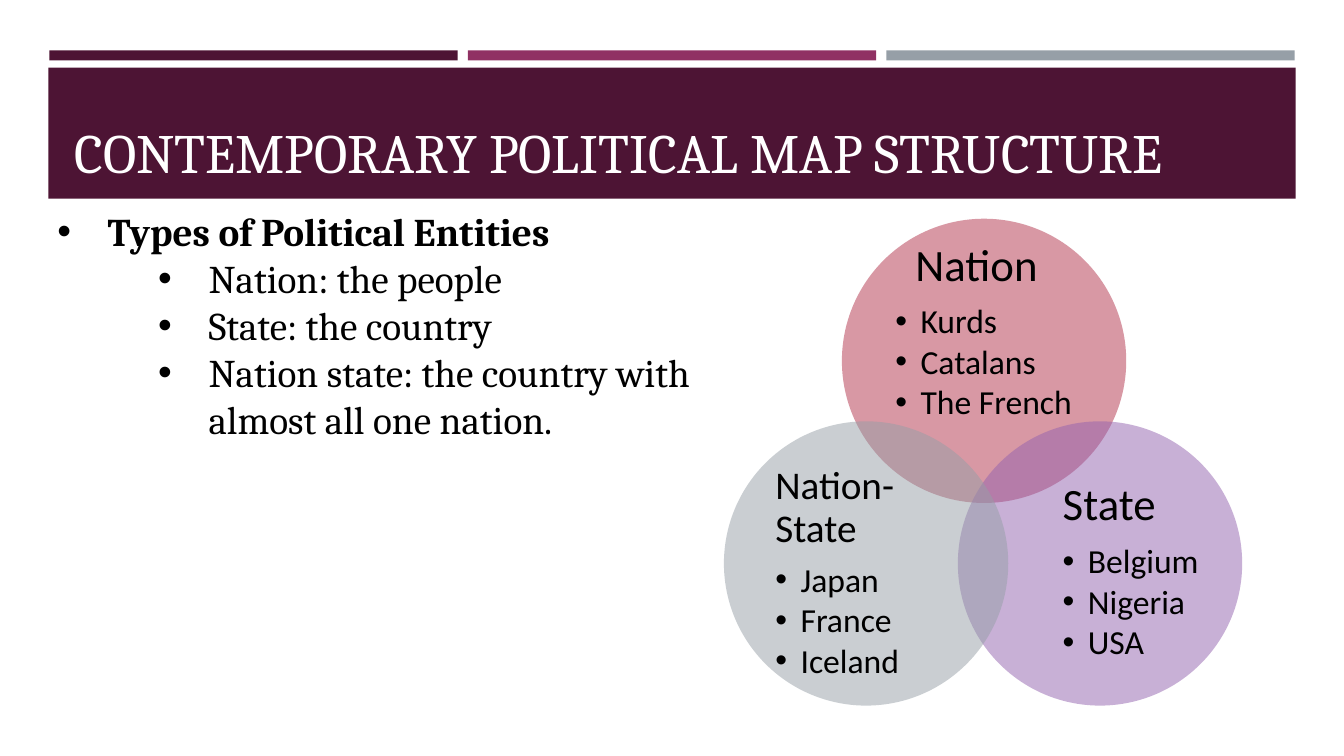
"""Build a slide on the structure of the contemporary political map."""
from pptx import Presentation
from pptx.dml.color import RGBColor
from pptx.enum.shapes import MSO_SHAPE
from pptx.enum.text import MSO_ANCHOR, MSO_AUTO_SIZE, PP_ALIGN
from pptx.oxml.ns import qn
from pptx.util import Inches, Pt
from lxml.etree import SubElement

PLUM = RGBColor(0x4D, 0x14, 0x34)
MAGENTA = RGBColor(0x90, 0x31, 0x63)
GREY = RGBColor(0x96, 0x9F, 0xA7)
RED = RGBColor(0xB2, 0x32, 0x4B)
PURPLE = RGBColor(0x93, 0x62, 0xAF)
BLACK = RGBColor(0, 0, 0)
WHITE = RGBColor(0xFF, 0xFF, 0xFF)

BAR_LEFT, BAR_WIDTH, BAR_STEP = 0.49, 4.05, 4.15
CIRCLE_SIZE = 2.82
ENTITIES = [
    "Nation: the people",
    "State: the country",
    "Nation state: the country with almost all one nation.",
]
CIRCLES = [
    (RED, (8.35, 2.17), (8.88, 2.66, 1.91, 1.27), "Nation", 32, 0.2,
     ["Kurds", "Catalans", "The French"]),
    (PURPLE, (9.5, 4.18), (10.54, 4.9, 1.52, 1.55), "State", 32, 0,
     ["Belgium", "Nigeria", "USA"]),
    (GREY, (7.18, 4.18), (7.69, 4.91, 1.45, 1.55), "Nation- State", 28, 0,
     ["Japan", "France", "Iceland"]),
]


class SlideBuilder:
    """Hold the fonts and the current page, and draw its elements."""

    heading_font = "Cambria"
    diagram_font = "Calibri"

    def __init__(self, page):
        self.page = page

    def shape(self, kind, left, top, width, height, color, opacity=None):
        """Draw a filled shape without an outline."""
        shape = self.page.shapes.add_shape(
            kind, Inches(left), Inches(top), Inches(width), Inches(height))
        shape.shadow.inherit = False
        shape.line.fill.background()
        shape.fill.solid()
        shape.fill.fore_color.rgb = color
        if opacity is not None:
            tint = shape.fill._xPr.find(qn("a:solidFill"))[0]
            SubElement(tint, qn("a:alpha"), val=str(opacity * 1000))

    def style(self, para, font, size, color=BLACK, bold=False):
        """Format every run of a paragraph."""
        for span in para.runs:
            span.font.name = font
            span.font.size = Pt(size)
            span.font.color.rgb = color
            span.font.bold = bold

    def indent(self, para, margin, hanging=0):
        """Indent a paragraph, with a bullet when the indent hangs."""
        props = para._p.get_or_add_pPr()
        props.set("marL", str(Inches(margin)))
        props.set("indent", str(-Inches(hanging)))
        if hanging:
            SubElement(props, qn("a:buFont"), typeface="Arial")
            SubElement(props, qn("a:buChar"), char="•")

    def title(self, text, left, top, width, height):
        """Place the title in front of its band."""
        box = self.page.shapes.title
        box.left, box.top = Inches(left), Inches(top)
        box.width, box.height = Inches(width), Inches(height)
        frame = box.text_frame
        frame.text = text
        frame.auto_size = MSO_AUTO_SIZE.NONE
        frame.vertical_anchor = MSO_ANCHOR.BOTTOM
        para = frame.paragraphs[0]
        para.alignment = PP_ALIGN.LEFT
        self.style(para, self.heading_font, 39.6, WHITE)
        self.page.shapes._spTree.append(box._element)

    def text_box(self, left, top, width, height, lines):
        """Add a wrapped text box with one paragraph per line."""
        box = self.page.shapes.add_textbox(
            Inches(left), Inches(top), Inches(width), Inches(height))
        frame = box.text_frame
        frame.word_wrap = True
        frame.text = "\n".join(lines)
        return frame

    def outline(self, area, heading, items):
        """Write a bold bullet with second-level bullets below it."""
        frame = self.text_box(*area, [heading, *items])
        for number, para in enumerate(frame.paragraphs):
            para.level = 2 if number else 0
            self.style(para, self.heading_font, 28, bold=number == 0)
            self.indent(para, 1.5 if number else 0.5, 0.5)

    def circle_text(self, area, heading, size, margin, items):
        """Write a heading and its bulleted examples in a circle."""
        frame = self.text_box(*area, [heading, *items])
        frame.vertical_anchor = MSO_ANCHOR.MIDDLE
        frame.margin_left = frame.margin_right = 0
        frame.margin_top = frame.margin_bottom = 0
        for number, para in enumerate(frame.paragraphs):
            para.line_spacing = 0.9
            para.level = 1 if number else 0
            para.space_after = Pt(3) if number else Pt(round(size * 0.31))
            self.style(para, self.diagram_font, 24 if number else size)
            self.indent(para, *((0.25, 0.25) if number else (margin,)))


def main():
    deck = Presentation()
    deck.slide_width, deck.slide_height = Inches(13.33), Inches(7.5)
    builder = SlideBuilder(deck.slides.add_slide(deck.slide_layouts[5]))

    for number, color in enumerate((PLUM, MAGENTA, GREY)):
        builder.shape(MSO_SHAPE.RECTANGLE, BAR_LEFT + number * BAR_STEP, 0.5,
                      BAR_WIDTH, 0.1, color)
    builder.shape(MSO_SHAPE.RECTANGLE, 0.48, 0.67, 12.37, 1.3, PLUM)
    builder.title("CONTEMPORARY POLITICAL MAP STRUCTURE", 0.64, 0.77, 12.06, 1.11)
    builder.outline((0.47, 2.01, 6.72, 2.46), "Types of Political Entities", ENTITIES)

    for color, corner, area, heading, size, margin, items in CIRCLES:
        builder.shape(MSO_SHAPE.OVAL, *corner, CIRCLE_SIZE, CIRCLE_SIZE, color, 50)
        builder.circle_text(area, heading, size, margin, items)
    deck.save("out.pptx")


if __name__ == "__main__":
    main()
